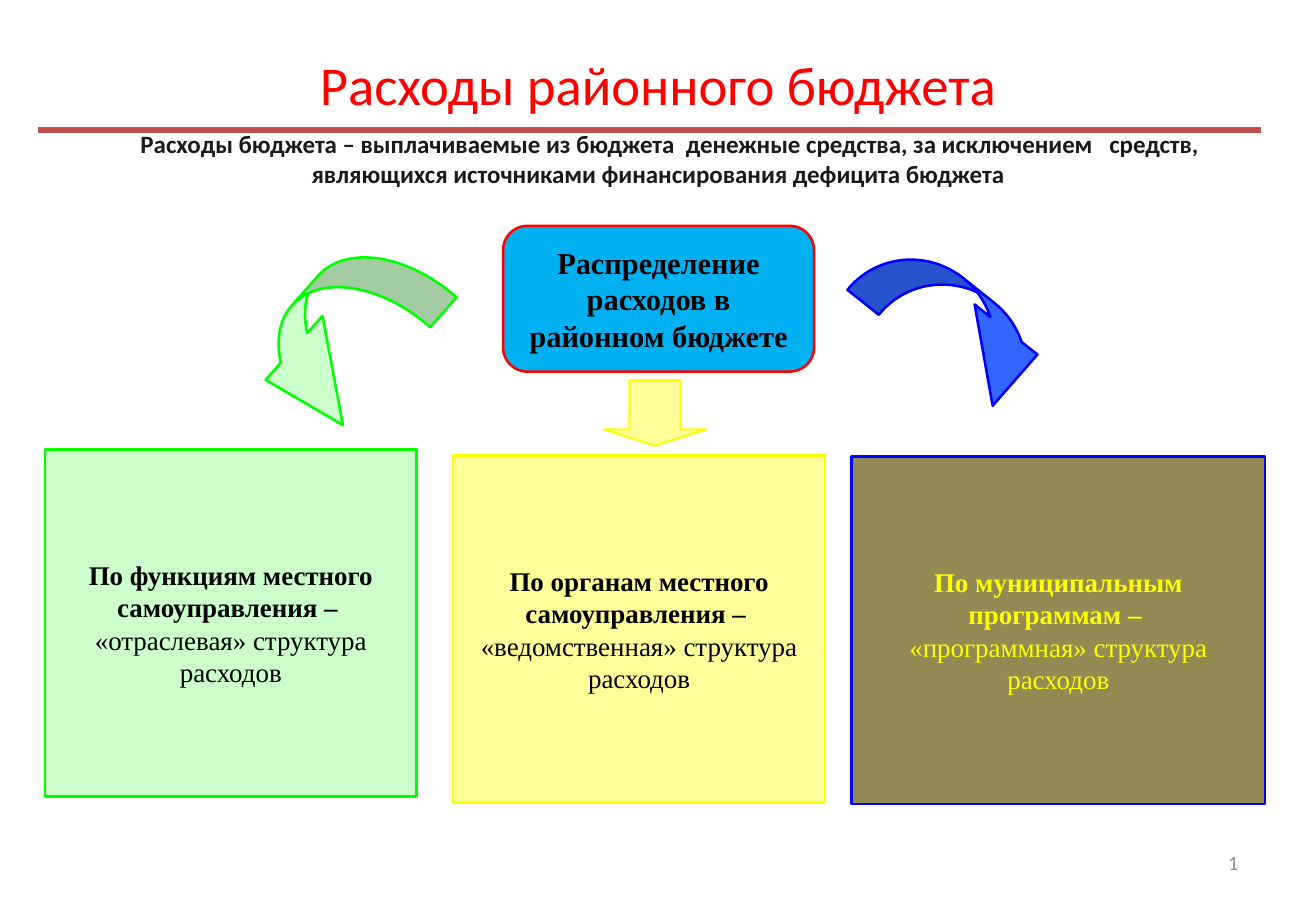
from pptx import Presentation
from pptx.dml.color import RGBColor
from pptx.enum.shapes import MSO_CONNECTOR, MSO_SHAPE as SHAPE
from pptx.enum.text import MSO_ANCHOR as ANCHOR, MSO_AUTO_SIZE, PP_ALIGN as ALIGN
from pptx.oxml.ns import qn
from pptx.util import Inches, Pt

SERIF, SANS = "Times New Roman", "Calibri"
GREEN, YELLOW, BLUE = "00FF00", "FFFF00", "0000FF"
PALE_GREEN, PALE_YELLOW = "CCFFCC", "FFFF99"


def style(paragraph, font, size, color, bold=False, align=ALIGN.CENTER):
    paragraph.alignment = align
    paragraph.font.name = font
    paragraph.font.size = Pt(size)
    paragraph.font.color.rgb = RGBColor.from_string(color)
    paragraph.font.bold = bold


def add_block(kind, box, fill, line, width=1.5, adjustments=(), rotation=0, margins=(0.12, 0)):
    """Add a filled, outlined shape without shadow; box is in inches."""
    block = slide.shapes.add_shape(kind, *map(Inches, box))
    block.shadow.inherit = False
    block.fill.solid()
    block.fill.fore_color.rgb = RGBColor.from_string(fill)
    block.line.color.rgb = RGBColor.from_string(line)
    block.line.width = Pt(width)
    block.rotation = rotation
    for i, value in enumerate(adjustments):
        block.adjustments[i] = value
    frame = block.text_frame
    frame.word_wrap = True
    frame.vertical_anchor = ANCHOR.MIDDLE
    frame.margin_left = frame.margin_right = Inches(margins[0])
    frame.margin_top = frame.margin_bottom = Inches(margins[1])
    return frame


prs = Presentation()
prs.slide_width, prs.slide_height = Inches(10.83), Inches(7.5)
slide = prs.slides.add_slide(prs.slide_layouts[1])

# Heading and definition
title, definition = slide.placeholders
for holder, top, height in ((title, 0.38, 0.61), (definition, 1.01, 0.71)):
    holder.left, holder.width = Inches(0.54), Inches(9.75)
    holder.top, holder.height = Inches(top), Inches(height)
    holder.text_frame.auto_size = MSO_AUTO_SIZE.NONE
title.text_frame.text = "Расходы районного бюджета"
title.text_frame.vertical_anchor = ANCHOR.MIDDLE
style(title.text_frame.paragraphs[0], SANS, 32.4, "FF0000")

definition.text_frame.text = (
    "Расходы бюджета – выплачиваемые из бюджета  денежные средства, за исключением   средств, "
    "являющихся источниками финансирования дефицита бюджета")
meaning = definition.text_frame.paragraphs[0]
style(meaning, SANS, 14.8, "1A1A1A", bold=True)
meaning.space_before = Pt(3)
properties = meaning._p.get_or_add_pPr()
properties.set("marL", "0")
properties.set("indent", str(Inches(0.19)))
properties.insert_element_before(properties.makeelement(qn("a:buNone"), {}), "a:tabLst", "a:defRPr")

page = slide.shapes.add_textbox(Inches(7.76), Inches(6.95), Inches(2.53), Inches(0.4)).text_frame
page.word_wrap = True
page.text = "1"
style(page.paragraphs[0], SANS, 12, "8C8C8C", align=ALIGN.RIGHT)

rule = slide.shapes.add_connector(
    MSO_CONNECTOR.STRAIGHT, Inches(0.31), Inches(1.07), Inches(10.38), Inches(1.07))
rule.line.color.rgb = RGBColor.from_string("C0504D")
rule.line.width = Pt(3.75)
outline = rule._element.spPr
outline.append(outline.makeelement(qn("a:effectLst"), {}))

# Source of the split
split = add_block(SHAPE.ROUNDED_RECTANGLE, (4.14, 1.86, 2.56, 1.2), "00B0F0", "FF0000",
                  adjustments=[0.167], margins=(0.14, 0.05))
split.text = "Распределение расходов в районном бюджете"
style(split.paragraphs[0], SERIF, 18, "000000", bold=True)

# Three ways to group the spending
groupings = [
    (0.37, 3.7, 3.06, PALE_GREEN, GREEN, "000000",
     "По функциям местного самоуправления – ", "«отраслевая» структура расходов"),
    (3.73, 3.75, 3.06, PALE_YELLOW, YELLOW, "000000",
     "По органам местного самоуправления – ", "«ведомственная» структура расходов"),
    (7.01, 3.76, 3.4, "948A54", BLUE, YELLOW,
     "По муниципальным программам – ", "«программная» структура расходов"),
]
for left, top, width, fill, line, ink, basis, structure in groupings:
    grouping = add_block(SHAPE.RECTANGLE, (left, top, width, 2.86), fill, line)
    grouping.text = f"{basis}\n{structure}"
    for paragraph, bold in zip(grouping.paragraphs, (True, False)):
        style(paragraph, SERIF, 16, ink, bold)

# Arrows to the groups
add_block(SHAPE.CURVED_UP_ARROW, (1.93, 2.3, 1.76, 0.97), PALE_GREEN, GREEN,
          adjustments=(0.338, 0.727, 0.747), rotation=131.6)
add_block(SHAPE.CURVED_DOWN_ARROW, (6.98, 2.37, 1.86, 0.67), "3366FF", BLUE,
          adjustments=(0.492, 0.987, 0.834), rotation=38.6)
add_block(SHAPE.DOWN_ARROW, (4.97, 3.13, 0.84, 0.54), PALE_YELLOW, YELLOW,
          width=1.25, adjustments=(0.5, 0.25))

prs.save("out.pptx")
